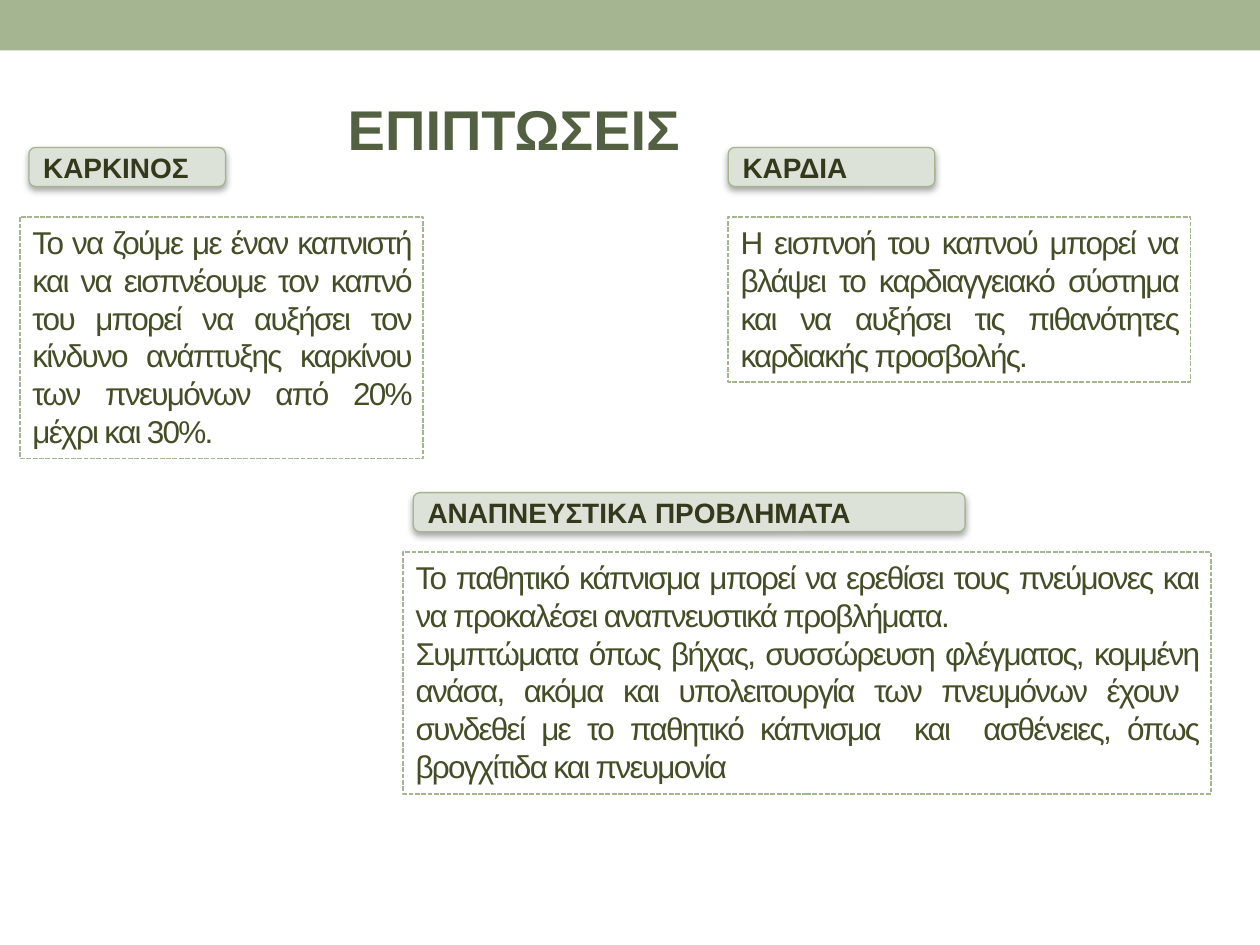
from lxml import etree
from pptx import Presentation
from pptx.dml.color import RGBColor
from pptx.enum.dml import MSO_LINE
from pptx.enum.shapes import MSO_SHAPE
from pptx.enum.text import MSO_ANCHOR, MSO_AUTO_SIZE, PP_ALIGN
from pptx.oxml.ns import qn
from pptx.util import Inches, Pt

RECT, ROUNDED = MSO_SHAPE.RECTANGLE, MSO_SHAPE.ROUNDED_RECTANGLE
DASH = MSO_LINE.SQUARE_DOT
TOP, MIDDLE = MSO_ANCHOR.TOP, MSO_ANCHOR.MIDDLE
GROW, FIXED = MSO_AUTO_SIZE.SHAPE_TO_FIT_TEXT, MSO_AUTO_SIZE.NONE
LEFT, JUSTIFY = PP_ALIGN.LEFT, PP_ALIGN.JUSTIFY

GREEN, PALE, WHITE = "A5B592", "DCE2D7", "FFFFFF"
TITLE_INK, HEADING_INK, BODY_INK = "536142", "333A1C", "444D26"

TOPICS = [
    ("ΚΑΡΚΙΝΟΣ", (0.23, 1.17, 1.56, 0.31), (0.16, 1.72, 3.2, 1.92), [
        "Το να ζούμε με έναν καπνιστή και να εισπνέουμε τον καπνό του μπορεί "
        "να αυξήσει τον κίνδυνο ανάπτυξης καρκίνου των πνευμόνων από 20% "
        "μέχρι και 30%. "]),
    ("ΚΑΡΔΙΑ", (5.78, 1.17, 1.64, 0.31), (5.78, 1.72, 3.67, 1.31), [
        "Η εισπνοή του καπνού μπορεί να βλάψει το καρδιαγγειακό σύστημα και "
        "να αυξήσει τις πιθανότητες καρδιακής προσβολής."]),
    ("ΑΝΑΠΝΕΥΣΤΙΚΑ ΠΡΟΒΛΗΜΑΤΑ", (3.28, 3.91, 4.38, 0.31), (3.2, 4.38, 6.41, 1.92), [
        "Το παθητικό κάπνισμα μπορεί να ερεθίσει τους πνεύμονες και να "
        "προκαλέσει αναπνευστικά προβλήματα. ",
        "Συμπτώματα όπως βήχας, συσσώρευση φλέγματος, κομμένη ανάσα, ακόμα "
        "και υπολειτουργία των πνευμόνων έχουν  συνδεθεί με το παθητικό "
        "κάπνισμα  και  ασθένειες, όπως βρογχίτιδα και πνευμονία"]),
]


def color(hex_value):
    return RGBColor.from_string(hex_value)


def write(holder, paragraphs, size, ink, bold=False, align=LEFT, anchor=TOP,
          fit=GROW, tracking=0):
    frame = holder.text_frame
    frame.word_wrap = True
    frame.auto_size = fit
    frame.vertical_anchor = anchor
    frame.margin_left = frame.margin_right = Inches(0.1)
    frame.margin_top = frame.margin_bottom = Inches(0.05)
    for index, text in enumerate(paragraphs):
        paragraph = frame.add_paragraph() if index else frame.paragraphs[0]
        paragraph.alignment = align
        paragraph.line_spacing = 1.0
        paragraph.space_before = Pt(0)
        run = paragraph.add_run()
        run.text = text
        run.font.name = "Arial"
        run.font.size = Pt(size)
        run.font.bold = bold
        run.font.color.rgb = color(ink)
        if tracking:
            run.font._element.set("spc", str(tracking * 100))


def add_panel(slide, kind, box, fill, line_width=None):
    panel = slide.shapes.add_shape(kind, *map(Inches, box))
    panel.shadow.inherit = False
    panel.fill.solid()
    panel.fill.fore_color.rgb = color(fill)
    if line_width:
        panel.line.color.rgb = color(GREEN)
        panel.line.width = Pt(line_width)
    else:
        panel.line.fill.background()
    return panel


def add_soft_shadow(panel):
    effects = panel._element.spPr.find(qn("a:effectLst"))
    shadow = etree.SubElement(
        effects, qn("a:outerShdw"), blurRad=str(Pt(4)), dist=str(Pt(2)),
        dir="5400000", rotWithShape="0")
    tint = etree.SubElement(shadow, qn("a:srgbClr"), val="000000")
    etree.SubElement(tint, qn("a:alpha"), val="35000")


def add_title(slide, text, box):
    title = slide.shapes.title
    title.left, title.top, title.width, title.height = map(Inches, box)
    write(title, [text], size=32, ink=TITLE_INK, bold=True)


def add_heading(slide, text, box):
    heading = add_panel(slide, ROUNDED, box, PALE, line_width=0.75)
    add_soft_shadow(heading)
    write(heading, [text], size=16, ink=HEADING_INK, bold=True,
          anchor=MIDDLE, fit=FIXED)


def add_body(slide, paragraphs, box):
    body = add_panel(slide, RECT, box, WHITE, line_width=0.9)
    body.line.dash_style = DASH
    write(body, paragraphs, size=18, ink=BODY_INK, align=JUSTIFY, tracking=-1)


def main():
    deck = Presentation()
    deck.slide_width, deck.slide_height = Inches(10), Inches(7.5)
    slide = deck.slides.add_slide(deck.slide_layouts[5])
    add_panel(slide, RECT, (0, 0, 10, 0.4), GREEN)
    add_title(slide, "ΕΠΙΠΤΩΣΕΙΣ", (2.66, 0.7, 3, 0.64))
    for heading, heading_box, body_box, paragraphs in TOPICS:
        add_heading(slide, heading, heading_box)
        add_body(slide, paragraphs, body_box)
    deck.save("out.pptx")


if __name__ == "__main__":
    main()
